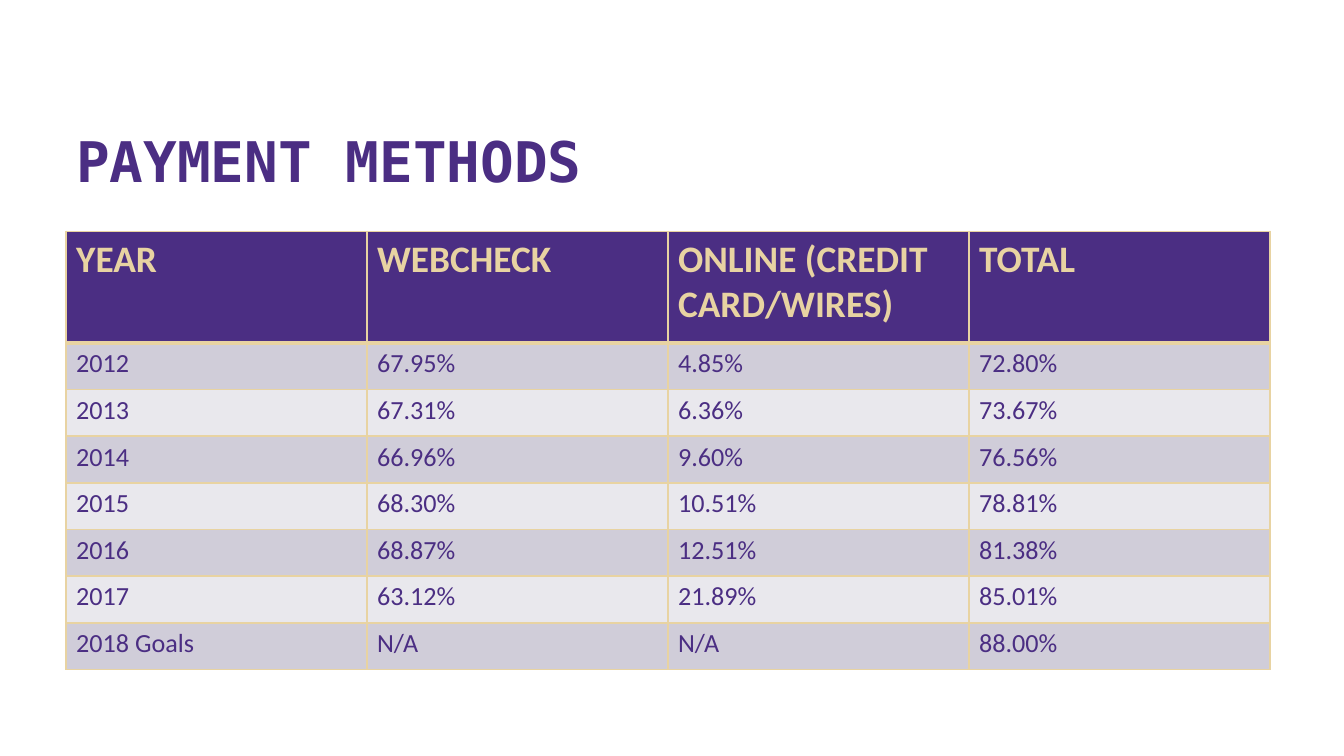
from lxml.etree import SubElement
from pptx import Presentation
from pptx.dml.color import RGBColor as RGB
from pptx.enum.text import MSO_ANCHOR as Anchor
from pptx.oxml.ns import qn
from pptx.util import Pt

# Content
TITLE = "PAYMENT METHODS"
HEADER = ("YEAR", "WEBCHECK", "ONLINE (CREDIT CARD/WIRES)", "TOTAL")
PAYMENTS = [
    ("2012", "67.95%", "4.85%", "72.80%"),
    ("2013", "67.31%", "6.36%", "73.67%"),
    ("2014", "66.96%", "9.60%", "76.56%"),
    ("2015", "68.30%", "10.51%", "78.81%"),
    ("2016", "68.87%", "12.51%", "81.38%"),
    ("2017", "63.12%", "21.89%", "85.01%"),
    ("2018 Goals", "N/A", "N/A", "88.00%"),
]

THEME = dict(
    purple="4B2E83", gold="E8D3A2", bands=("D0CDD9", "E9E8ED"),
    title_font="DejaVu Sans Mono", body_font="Calibri",
    title_size=30, header_size=20, body_size=14,
)

# Layout, in points
SLIDE_W, SLIDE_H = 720, 405
LEFT, WIDTH = 35.4, 645
TITLE_TOP, TITLE_H = 46.8, 59.8
TABLE_TOP, HEADER_H, ROW_H = 124, 59.8, 25
INSET_X, INSET_Y = 5.4, 2.7
LINE, HEADER_LINE = 1, 3


def write(tf, text, *, font=THEME["body_font"], size=THEME["body_size"],
          color=THEME["purple"], bold=False):
    r = tf.paragraphs[0].add_run()
    r.text = text
    r.font.name, r.font.size, r.font.bold = font, Pt(size), bold
    r.font.color.rgb = RGB.from_string(color)


def set_insets(box):
    box.margin_left = box.margin_right = Pt(INSET_X)
    box.margin_top = box.margin_bottom = Pt(INSET_Y)


def set_borders(cell, **widths):
    """Draw the sides L, R, T and B; they must come before the fill."""
    tcPr = cell._tc.get_or_add_tcPr()
    for side in "LRTB":
        ln = SubElement(tcPr, qn(f"a:ln{side}"), w=str(Pt(widths.get(side, LINE))))
        fill = SubElement(ln, qn("a:solidFill"))
        SubElement(fill, qn("a:srgbClr"), val=THEME["gold"])


def add_title(slide):
    sp = slide.shapes.add_textbox(Pt(LEFT), Pt(TITLE_TOP), Pt(WIDTH), Pt(TITLE_H))
    tf = sp.text_frame
    tf.word_wrap, tf.vertical_anchor = True, Anchor.BOTTOM
    set_insets(tf)
    write(tf, TITLE, font=THEME["title_font"], size=THEME["title_size"], bold=True)


def add_payment_table(slide):
    rows = [HEADER, *PAYMENTS]
    height = HEADER_H + ROW_H * len(PAYMENTS)
    table = slide.shapes.add_table(len(rows), len(HEADER), Pt(LEFT), Pt(TABLE_TOP),
                                   Pt(WIDTH), Pt(height)).table
    for col in table.columns:
        col.width = Pt(WIDTH / len(HEADER))
    for i, values in enumerate(rows):
        is_header = i == 0
        table.rows[i].height = Pt(HEADER_H if is_header else ROW_H)
        fill = THEME["purple"] if is_header else THEME["bands"][(i - 1) % 2]
        style = dict(size=THEME["header_size"], color=THEME["gold"],
                     bold=True) if is_header else {}
        # The heavy rule is shared by the header and the first data row
        heavy = {0: {"B": HEADER_LINE}, 1: {"T": HEADER_LINE}}.get(i, {})
        for cell, text in zip(table.rows[i].cells, values):
            set_insets(cell)
            set_borders(cell, **heavy)
            cell.fill.solid()
            cell.fill.fore_color.rgb = RGB.from_string(fill)
            write(cell.text_frame, text, **style)


def main():
    prs = Presentation()
    prs.slide_width, prs.slide_height = Pt(SLIDE_W), Pt(SLIDE_H)
    slide = prs.slides.add_slide(prs.slide_layouts[6])
    add_title(slide)
    add_payment_table(slide)
    prs.save("out.pptx")


if __name__ == "__main__":
    main()
